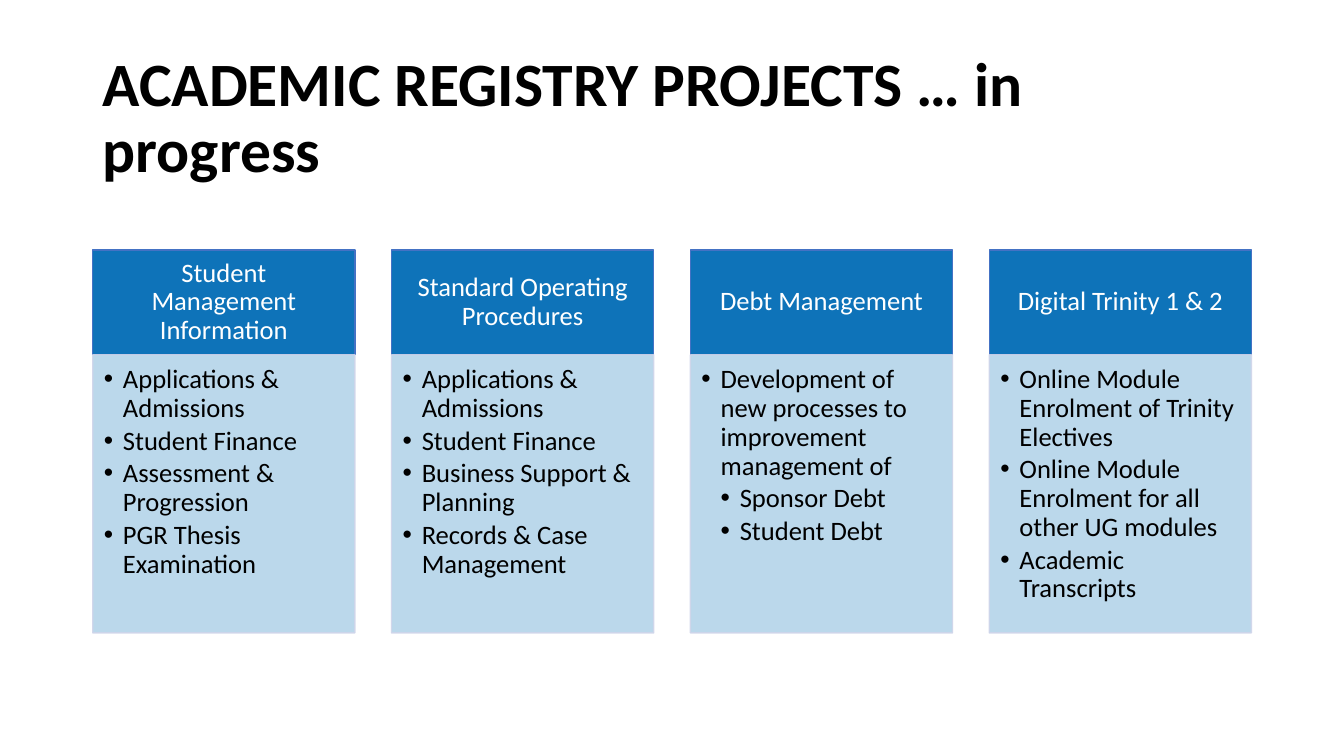
from lxml import etree
from pptx import Presentation
from pptx.dml.color import RGBColor
from pptx.enum.shapes import MSO_SHAPE
from pptx.enum.text import MSO_ANCHOR, PP_ALIGN
from pptx.oxml.ns import qn
from pptx.util import Inches, Pt

TITLE = "ACADEMIC REGISTRY PROJECTS … in progress"
PROJECTS = [
    ("Student Management Information", [
        (1, "Applications & Admissions"),
        (1, "Student Finance"),
        (1, "Assessment & Progression"),
        (1, "PGR Thesis Examination")]),
    ("Standard Operating Procedures", [
        (1, "Applications & Admissions"),
        (1, "Student Finance"),
        (1, "Business Support & Planning"),
        (1, "Records & Case Management")]),
    ("Debt Management", [
        (1, "Development of new processes to improvement management of"),
        (2, "Sponsor Debt"),
        (2, "Student Debt")]),
    ("Digital Trinity 1 & 2", [
        (1, "Online Module Enrolment of Trinity Electives"),
        (1, "Online Module Enrolment for all other UG modules"),
        (1, "Academic Transcripts")]),
]

BLACK = RGBColor(0x00, 0x00, 0x00)
WHITE = RGBColor(0xFF, 0xFF, 0xFF)
BLUE = RGBColor(0x0E, 0x73, 0xB9)
HEAD_LINE = RGBColor(0x44, 0x72, 0xC4)
BODY_LINE = RGBColor(0xCF, 0xD5, 0xEA)
RECT = MSO_SHAPE.RECTANGLE
TOP, MIDDLE = MSO_ANCHOR.TOP, MSO_ANCHOR.MIDDLE
LEFT, CENTER = PP_ALIGN.LEFT, PP_ALIGN.CENTER

LEFT_EDGE, COL_W, COL_STEP = 0.92, 2.6, 2.964
HEAD_TOP, HEAD_H, BODY_H = 2.48, 1.04, 2.76
INDENT = 0.19

TITLE_FONT = {"name": "Calibri", "size": Pt(44), "bold": True}
CARD_FONT = {"name": "Calibri", "size": Pt(19)}


def set_frame(tf, anchor, insets):
    sides = ("margin_left", "margin_top", "margin_right", "margin_bottom")
    tf.word_wrap = True
    tf.vertical_anchor = anchor
    for side, inset in zip(sides, insets):
        setattr(tf, side, Inches(inset))


def add_text(p, text, font, color, align):
    p.alignment = align
    p.line_spacing = 0.9
    r = p.add_run()
    r.text = text
    for name, value in font.items():
        setattr(r.font, name, value)
    r.font.color.rgb = color


def add_bullet(p, level):
    p.level = level
    pPr = p._p.get_or_add_pPr()
    pPr.set("marL", str(Inches(INDENT * level)))
    pPr.set("indent", str(-Inches(INDENT)))
    etree.SubElement(pPr, qn("a:buFont")).set("typeface", "Arial")
    etree.SubElement(pPr, qn("a:buChar")).set("char", "•")


def set_alpha(fill, percent):
    color = fill._xPr.find(qn("a:solidFill"))[0]
    etree.SubElement(color, qn("a:alpha")).set("val", str(percent * 1000))


def add_card(s, x, y, h, line):
    sp = s.shapes.add_shape(RECT, Inches(x), Inches(y), Inches(COL_W), Inches(h))
    sp.shadow.inherit = False
    sp.fill.solid()
    sp.fill.fore_color.rgb = BLUE
    sp.line.color.rgb = line
    sp.line.width = Pt(1)
    return sp


prs = Presentation()
prs.slide_width, prs.slide_height = Inches(13.33), Inches(7.5)
s = prs.slides.add_slide(prs.slide_layouts[6])

title = s.shapes.add_textbox(Inches(LEFT_EDGE), Inches(0.46), Inches(11.5), Inches(1.45))
set_frame(title.text_frame, MIDDLE, (0.1, 0.05, 0.1, 0.05))
add_text(title.text_frame.paragraphs[0], TITLE, TITLE_FONT, BLACK, LEFT)

for col, (heading, items) in enumerate(PROJECTS):
    x = LEFT_EDGE + col * COL_STEP
    head = add_card(s, x, HEAD_TOP, HEAD_H, HEAD_LINE)
    set_frame(head.text_frame, MIDDLE, (0.15, 0.08, 0.15, 0.08))
    add_text(head.text_frame.paragraphs[0], heading, CARD_FONT, WHITE, CENTER)

    body = add_card(s, x, HEAD_TOP + HEAD_H, BODY_H, BODY_LINE)
    set_alpha(body.fill, 28)
    set_alpha(body.line.fill, 90)
    tf = body.text_frame
    set_frame(tf, TOP, (0.11, 0.11, 0.15, 0.17))
    for i, (level, text) in enumerate(items):
        p = tf.add_paragraph() if i else tf.paragraphs[0]
        add_bullet(p, level)
        add_text(p, text, CARD_FONT, BLACK, LEFT)
        p.space_after = Pt(2.8)

prs.save("out.pptx")
